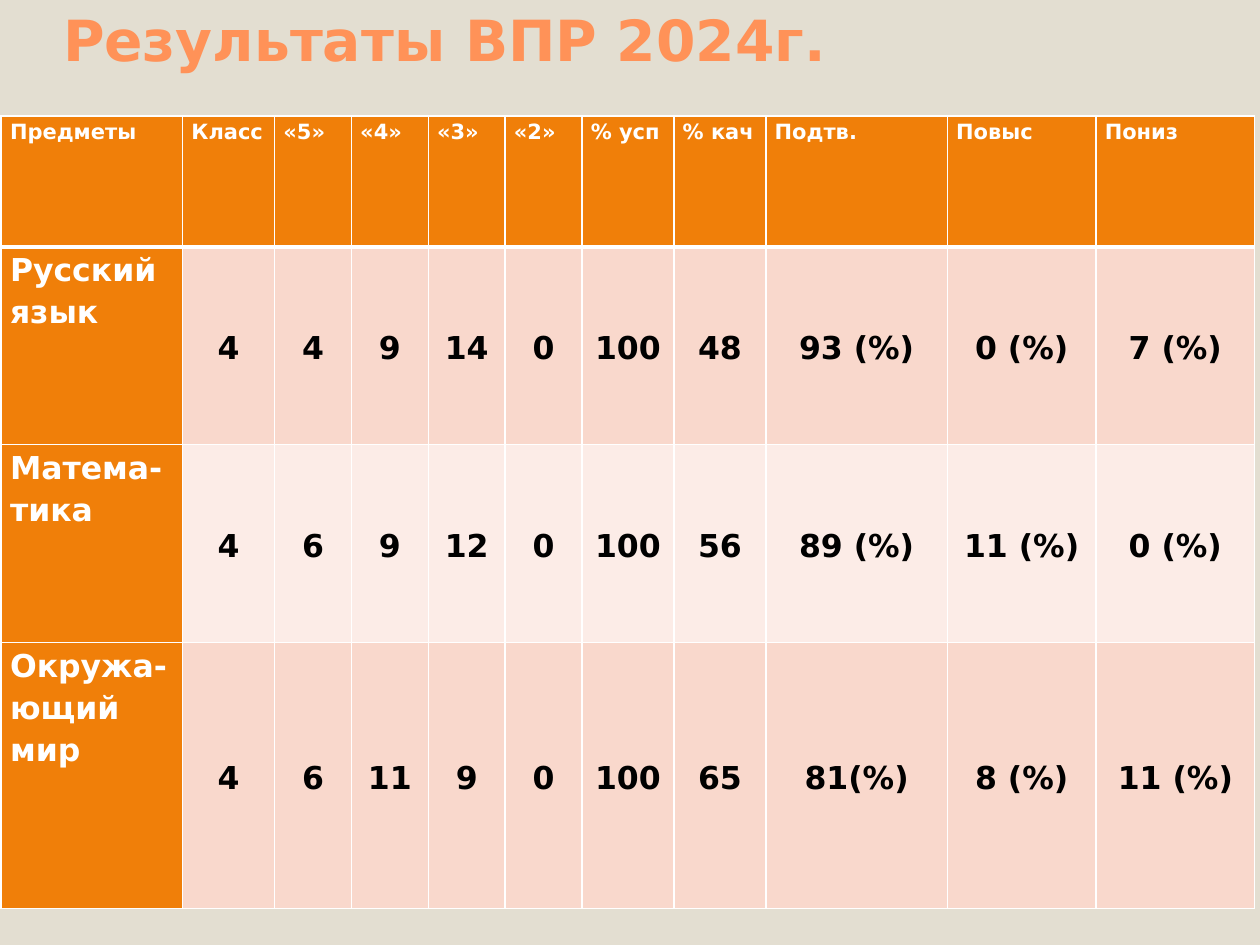
"""Builds a slide with a table of school test results."""
from lxml import etree
from pptx import Presentation
from pptx.dml.color import RGBColor
from pptx.enum.text import MSO_ANCHOR, PP_ALIGN
from pptx.oxml.ns import qn
from pptx.util import Inches, Pt

TOP, MIDDLE, BOTTOM = MSO_ANCHOR.TOP, MSO_ANCHOR.MIDDLE, MSO_ANCHOR.BOTTOM
LEFT, CENTER, JUSTIFY = PP_ALIGN.LEFT, PP_ALIGN.CENTER, PP_ALIGN.JUSTIFY
COLORS = {"bg": "E3DED1", "title": "FF9258", "head": "F07F09", "odd": "F9D8CC",
          "even": "FCECE7", "white": "FFFFFF", "black": "000000"}
FONT = "DejaVu Sans"
COLS = [1.44, 0.73, 0.61, 0.61, 0.61, 0.61, 0.73, 0.73, 1.44, 1.18, 1.26]
ROWS = [1.04, 1.57, 1.57, 2.11]
RESULTS = [
    ["Предметы", "Класс", "«5»", "«4»", "«3»", "«2»", "% усп", "% кач",
     "Подтв.", "Повыс", "Пониз"],
    ["Русский язык", "4", "4", "9", "14", "0", "100", "48", "93 (%)", "0 (%)", "7 (%)"],
    ["Матема-тика", "4", "6", "9", "12", "0", "100", "56", "89 (%)", "11 (%)", "0 (%)"],
    ["Окружа-ющий мир", "4", "6", "11", "9", "0", "100", "65", "81(%)", "8 (%)", "11 (%)"],
]


def rgb(name):
    return RGBColor.from_string(COLORS[name])


class Deck:
    def __init__(self, prs):
        self.prs = prs
        self.s = None

    def slide(self):
        self.s = self.prs.slides.add_slide(self.prs.slide_layouts[5])
        fill = self.s.background.fill
        fill.solid()
        fill.fore_color.rgb = rgb("bg")

    def text(self, tf, text, size, color, align, spacing=1.0):
        tf.word_wrap = True
        p = tf.paragraphs[0]
        p.alignment, p.line_spacing = align, spacing
        r = p.add_run()
        r.text = text
        r.font.name, r.font.size, r.font.bold = FONT, Pt(size), True
        r.font.color.rgb = rgb(color)

    def title(self, text, left, top, width, height):
        sp = self.s.shapes.title
        sp.left, sp.top = Inches(left), Inches(top)
        sp.width, sp.height = Inches(width), Inches(height)
        tf = sp.text_frame
        tf.vertical_anchor = BOTTOM
        tf.margin_left = tf.margin_right = Inches(0.07)
        tf.margin_top = tf.margin_bottom = Inches(0.02)
        self.text(tf, text, 32.4, "title", LEFT)

    def borders(self, cell, widths):
        tc_pr = cell._tc.get_or_add_tcPr()
        for i, (side, width) in enumerate(widths.items()):
            ln = etree.Element(qn(f"a:ln{side}"), w=str(Pt(width)))
            fill = etree.SubElement(ln, qn("a:solidFill"))
            etree.SubElement(fill, qn("a:srgbClr"), val=COLORS["white"])
            tc_pr.insert(i, ln)

    def cell(self, cell, text, row, col):
        label = row == 0 or col == 0
        cell.margin_left = cell.margin_right = Inches(0.07)
        cell.margin_top = cell.margin_bottom = 0
        cell.vertical_anchor = TOP if label else MIDDLE
        cell.fill.solid()
        cell.fill.fore_color.rgb = rgb("head" if label else "odd" if row % 2 else "even")
        self.text(cell.text_frame, text, 18 if row else 12,
                  "white" if label else "black", JUSTIFY if label else CENTER, 1.15)
        self.borders(cell, {"L": 1, "R": 1, "T": 3 if row == 1 else 1,
                            "B": 1 if row else 3})

    def table(self, data, left, top, cols, rows):
        table = self.s.shapes.add_table(
            len(rows), len(cols), Inches(left), Inches(top),
            Inches(sum(cols)), Inches(sum(rows))).table
        for column, width in zip(table.columns, cols):
            column.width = Inches(width)
        for i, (height, values) in enumerate(zip(rows, data)):
            table.rows[i].height = Inches(height)
            for j, text in enumerate(values):
                self.cell(table.cell(i, j), text, i, j)


def main():
    prs = Presentation()
    prs.slide_width, prs.slide_height = Inches(10), Inches(7.5)
    deck = Deck(prs)
    deck.slide()
    deck.title("Результаты ВПР 2024г.", 0.43, 0.13, 8.95, 0.47)
    deck.table(RESULTS, 0.01, 0.92, COLS, ROWS)
    prs.save("out.pptx")


if __name__ == "__main__":
    main()
